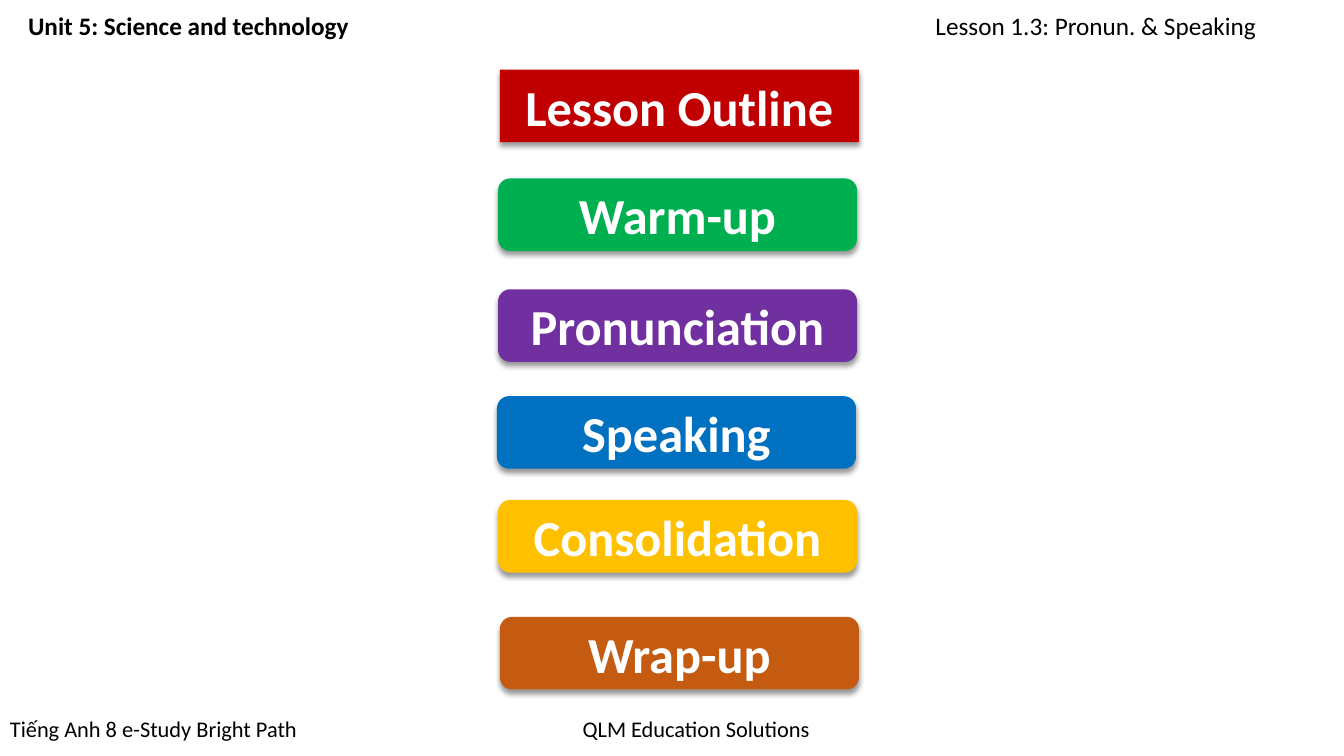
from lxml.etree import SubElement
from pptx import Presentation
from pptx.dml.color import RGBColor
from pptx.enum.shapes import MSO_SHAPE
from pptx.enum.text import MSO_ANCHOR, MSO_AUTO_SIZE, PP_ALIGN
from pptx.oxml.ns import qn
from pptx.util import Inches, Pt

COLOURS = {
    "ink": "000000",
    "paper": "FFFFFF",
    "outline": "C00000",
    "warm_up": "00B050",
    "pronunciation": "7030A0",
    "speaking": "0070C0",
    "consolidation": "FFC000",
    "wrap_up": "C55A11",
}


def colour(name):
    return RGBColor.from_string(COLOURS[name])


def add_shadow(effects, blur, distance, angle):
    shadow = SubElement(effects, qn("a:outerShdw"), blurRad=str(Pt(blur)), dist=str(Pt(distance)),
                        dir=str(angle * 60000), algn="tl", rotWithShape="0")
    black = SubElement(shadow, qn("a:srgbClr"), val=COLOURS["ink"])
    SubElement(black, qn("a:alpha"), val="40000")


def write_text(frame, text, size, ink, bold=False, align=PP_ALIGN.LEFT,
               anchor=MSO_ANCHOR.TOP, wrap=True, shadow=False):
    frame.auto_size = MSO_AUTO_SIZE.NONE
    frame.word_wrap = wrap
    frame.vertical_anchor = anchor
    para = frame.paragraphs[0]
    para.alignment = align
    span = para.add_run()
    span.text = text
    span.font.size = Pt(size)
    span.font.bold = bold
    span.font.color.rgb = colour(ink)
    if shadow:
        add_shadow(SubElement(span.font._element, qn("a:effectLst")), blur=3, distance=3, angle=45)
    span.font.name = "Calibri"


class LessonSlide:
    button_width, button_height, button_size = 26.71, 9.6, 36

    def __init__(self, deck):
        self.column = deck.slide_width / 100
        self.row = deck.slide_height / 100
        self.page = deck.slides.add_slide(deck.slide_layouts[5])

    def area(self, left, top, width, height):
        return (round(left * self.column), round(top * self.row),
                round(width * self.column), round(height * self.row))

    def label(self, text, left, top, width, height, size, bold=False, wrap=True):
        box = self.page.shapes.add_textbox(*self.area(left, top, width, height))
        write_text(box.text_frame, text, size, "ink", bold=bold, wrap=wrap, shadow=True)

    def style_button(self, button, text, fill):
        button.fill.solid()
        button.fill.fore_color.rgb = colour(fill)
        button.line.fill.background()
        button.shadow.inherit = False
        add_shadow(button._element.spPr.find(qn("a:effectLst")), blur=4, distance=3, angle=90)
        write_text(button.text_frame, text, self.button_size, "paper", bold=True,
                   align=PP_ALIGN.CENTER, anchor=MSO_ANCHOR.MIDDLE)

    def title(self, text, left, top, fill):
        title = self.page.shapes.title
        title.left, title.top, title.width, title.height = self.area(
            left, top, self.button_width, self.button_height)
        outline = SubElement(title._element.spPr, qn("a:prstGeom"), prst="roundRect")
        SubElement(outline, qn("a:avLst"))
        self.style_button(title, text, fill)

    def button(self, text, left, top, fill):
        button = self.page.shapes.add_shape(
            MSO_SHAPE.ROUNDED_RECTANGLE,
            *self.area(left, top, self.button_width, self.button_height))
        self.style_button(button, text, fill)


def main():
    deck = Presentation()
    deck.slide_width, deck.slide_height = Inches(13.33), Inches(7.5)
    slide = LessonSlide(deck)

    slide.label("Unit 5: Science and technology", 1.35, 0.67, 28.73, 5.33, 18, bold=True)
    slide.label("Lesson 1.3: Pronun. & Speaking", 68.87, 0.67, 26.86, 5.33, 18)
    slide.label("Tiếng Anh 8 e-Study Bright Path", 0, 94, 24.08, 4.93, 16, wrap=False)
    slide.label("QLM Education Solutions", 42.61, 94, 18.45, 4.93, 16, wrap=False)

    slide.title("Lesson Outline", 37.2, 9.2, "outline")
    stages = [
        ("Warm-up", 37.06, 23.6, "warm_up"),
        ("Pronunciation", 37.06, 38.27, "pronunciation"),
        ("Speaking", 36.98, 52.4, "speaking"),
        ("Consolidation", 37.06, 66.13, "consolidation"),
        ("Wrap-up", 37.2, 81.6, "wrap_up"),
    ]
    for stage in stages:
        slide.button(*stage)

    deck.save("out.pptx")


if __name__ == "__main__":
    main()
